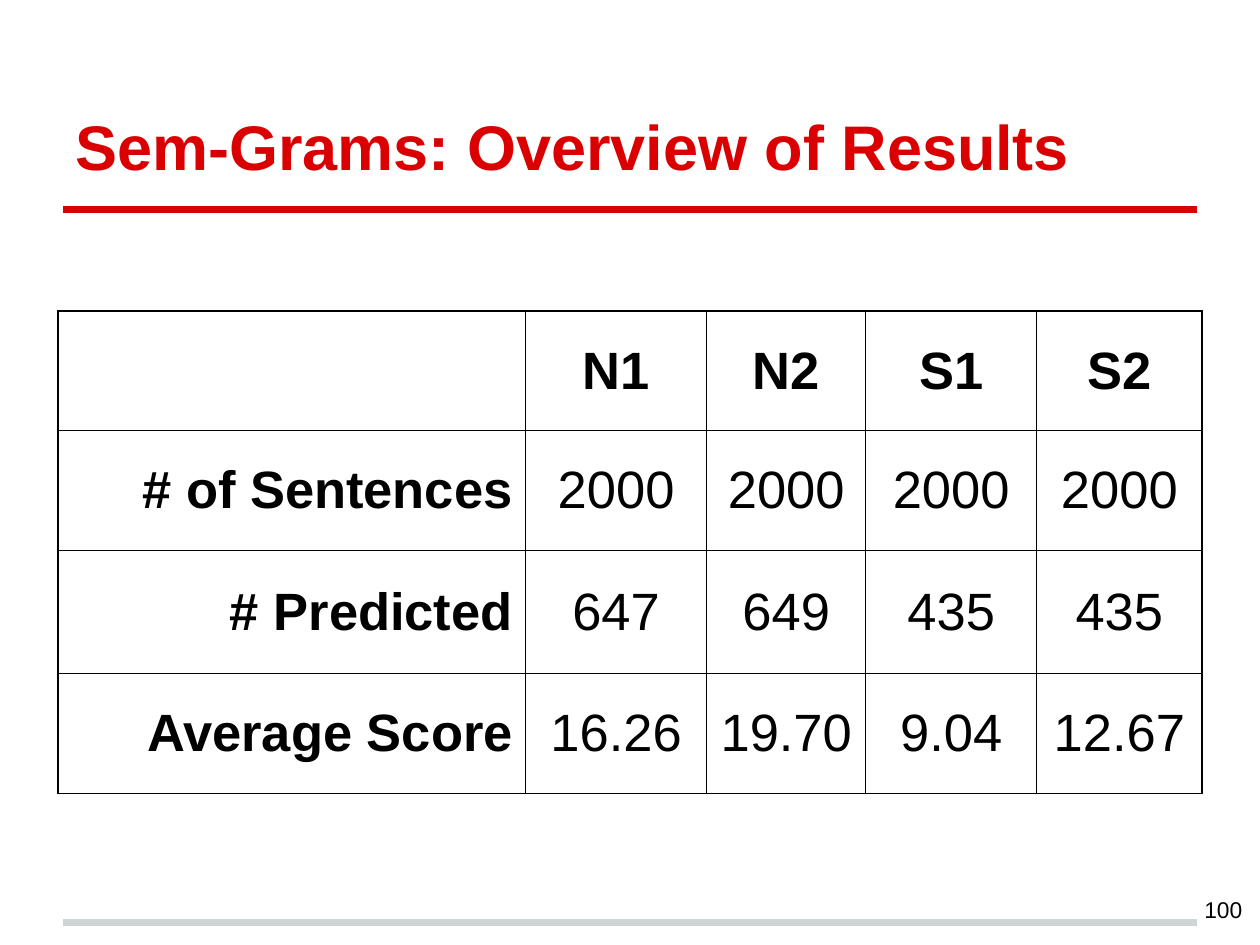
from lxml import etree
from pptx import Presentation
from pptx import util as u
from pptx.dml.color import RGBColor
from pptx.enum import shapes, text
from pptx.oxml.ns import qn

COLORS = {"red": "DA0002", "grey": "CFD4D4", "black": "000000", "white": "FFFFFF"}
FONT = "Arial"
INSET = u.Cm(0.25)
COLUMN_WIDTHS = [9.42, 3.66, 3.2, 3.45, 3.33]
ROW_HEIGHTS = [2.41, 2.41, 2.49, 2.41]
RESULTS = [
    ["", "N1", "N2", "S1", "S2"],
    ["# of Sentences", "2000", "2000", "2000", "2000"],
    ["# Predicted", "647", "649", "435", "435"],
    ["Average Score", "16.26", "19.70", "9.04", "12.67"],
]


def add_span(para, words, size, color="black", bold=False):
    """Add one formatted run to a paragraph."""
    span = para.add_run()
    span.text = words
    span.font.name = FONT
    span.font.size = u.Pt(size)
    span.font.bold = bold
    span.font.color.rgb = RGBColor.from_string(COLORS[color])


def set_insets(holder):
    """Give a text frame or a cell equal margins."""
    holder.margin_left = holder.margin_right = INSET
    holder.margin_top = holder.margin_bottom = INSET


def add_text(page, place, words, size, anchor, align, **style):
    """Add a wrapped text box with one line of text."""
    frame = page.shapes.add_textbox(*map(u.Cm, place)).text_frame
    frame.word_wrap = True
    frame.vertical_anchor = anchor
    set_insets(frame)
    frame.paragraphs[0].alignment = align
    add_span(frame.paragraphs[0], words, size, **style)


def add_rule(page, top, color):
    """Draw a horizontal rule between the page margins."""
    rule = page.shapes.add_connector(
        shapes.MSO_CONNECTOR.STRAIGHT, u.Cm(1.27), u.Cm(top), u.Cm(24.13), u.Cm(top))
    rule.line.width = u.Pt(4)
    rule.line.color.rgb = RGBColor.from_string(COLORS[color])
    etree.SubElement(rule._element.spPr, qn("a:effectLst"))


def set_borders(cell):
    """Draw a thin black line on each side of a cell."""
    properties = cell._tc.get_or_add_tcPr()
    for side in ("lnL", "lnR", "lnT", "lnB"):
        line = etree.SubElement(properties, qn(f"a:{side}"), w=str(u.Pt(0.75)))
        fill = etree.SubElement(line, qn("a:solidFill"))
        etree.SubElement(fill, qn("a:srgbClr"), val=COLORS["black"])


def add_results(page):
    """Add the results table with bold headings and centred values."""
    table = page.shapes.add_table(
        len(ROW_HEIGHTS), len(COLUMN_WIDTHS), u.Cm(1.17), u.Cm(6.27),
        u.Cm(sum(COLUMN_WIDTHS)), u.Cm(sum(ROW_HEIGHTS))).table
    table.first_row = table.horz_banding = False
    for column, width in zip(table.columns, COLUMN_WIDTHS):
        column.width = u.Cm(width)
    for row, height in zip(table.rows, ROW_HEIGHTS):
        row.height = u.Cm(height)
    for r, values in enumerate(RESULTS):
        for c, value in enumerate(values):
            cell = table.cell(r, c)
            set_borders(cell)
            cell.fill.solid()
            cell.fill.fore_color.rgb = RGBColor.from_string(COLORS["white"])
            cell.vertical_anchor = text.MSO_ANCHOR.MIDDLE
            set_insets(cell)
            if value:
                para = cell.text_frame.paragraphs[0]
                para.alignment = text.PP_ALIGN.CENTER if c else text.PP_ALIGN.RIGHT
                add_span(para, value, 30, bold=r == 0 or c == 0)


def main():
    """Build and save the slide."""
    deck = Presentation()
    deck.slide_width, deck.slide_height = u.Cm(25.4), u.Cm(19.05)
    page = deck.slides.add_slide(deck.slide_layouts[6])
    add_rule(page, 4.23, "red")
    add_rule(page, 18.6, "grey")
    add_text(page, (1.27, 0.76, 22.86, 3.18), "Sem-Grams: Overview of Results", 36,
             text.MSO_ANCHOR.BOTTOM, text.PP_ALIGN.LEFT, color="red", bold=True)
    add_results(page)
    add_text(page, (23.77, 17.6, 1.52, 1.45), "100", 13,
             text.MSO_ANCHOR.MIDDLE, text.PP_ALIGN.RIGHT)
    deck.save("out.pptx")


if __name__ == "__main__":
    main()
